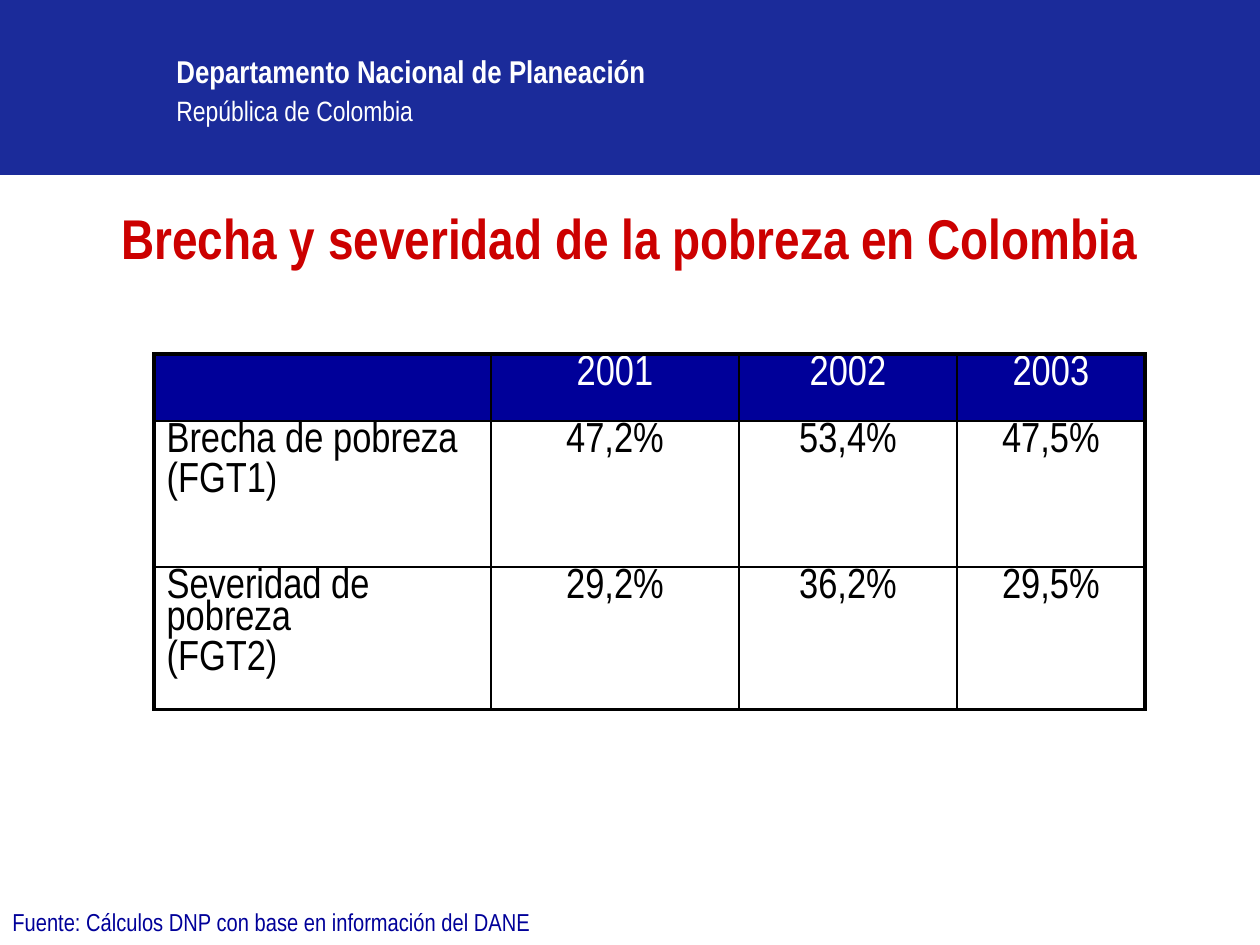
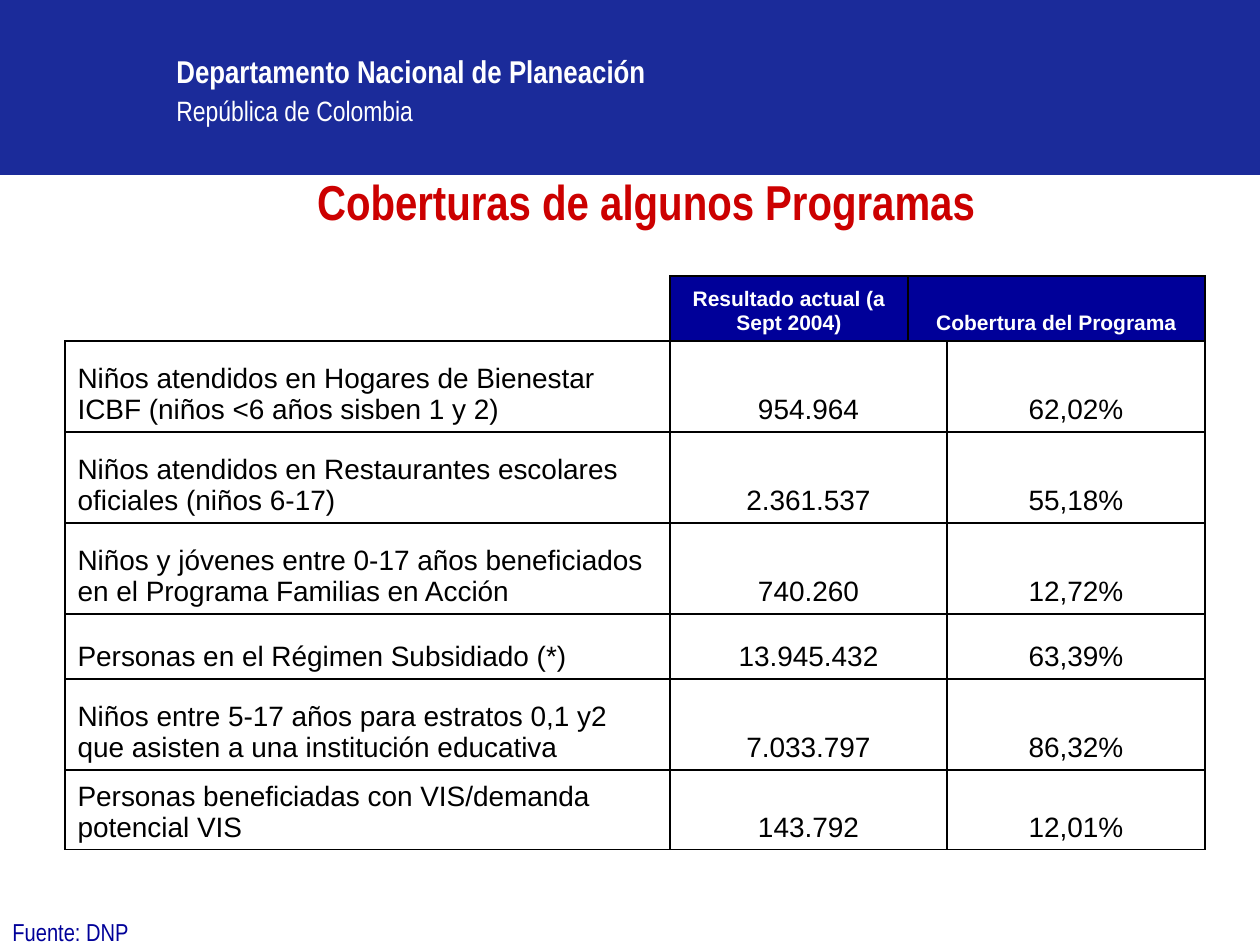
"""Build two slides on poverty and programme coverage in Colombia."""
from dataclasses import dataclass
from typing import NamedTuple, Optional

from lxml.etree import SubElement
from pptx import Presentation
from pptx.dml.color import RGBColor
from pptx.enum.shapes import MSO_SHAPE
from pptx.enum.text import MSO_ANCHOR, PP_ALIGN
from pptx.oxml.ns import qn
from pptx.util import Emu, Pt

EMU_PER_PX = 914400 / 126


@dataclass(frozen=True)
class Theme:
    """Colours, fonts and type sizes of the deck."""
    band: str = "1B2B9A"
    heading: str = "CC0000"
    navy: str = "000099"
    ink: str = "000000"
    paper: str = "FFFFFF"
    narrow: str = "Arial Narrow"
    regular: str = "Arial"
    agency_size: int = 18
    country_size: int = 16
    source_size: int = 14


THEME = Theme()


class Box(NamedTuple):
    """Position and size in px."""
    left: int
    top: int
    width: int
    height: int


class Style(NamedTuple):
    """Look of a run of text."""
    size: int
    color: str
    bold: bool = False
    font: str = THEME.narrow


@dataclass(frozen=True)
class Grid:
    """A table: its measures, its looks and its rows, None being merged leftwards."""
    left: int
    top: int
    widths: tuple[int, ...]
    heights: tuple[int, ...]
    rows: tuple[tuple[Optional[str], ...], ...]
    head: Style
    body: Style
    outer_line: float
    anchor: MSO_ANCHOR
    spacing: float = 1.0
    open_corner: bool = False


@dataclass(frozen=True)
class Page:
    """The content of one slide."""
    title: str
    title_box: Box
    title_size: int
    source: str
    source_top: int
    grid: Grid


PAGES = (
    Page(
        "Brecha y severidad de la pobreza en Colombia", Box(63, 197, 1134, 158), 32,
        "Fuente: Cálculos DNP con base en información del DANE", 900,
        Grid(
            154, 354, (337, 248, 218, 188), (67, 146, 139),
            (
                ("", "2001", "2002", "2003"),
                ("Brecha de pobreza\n(FGT1)", "47,2%", "53,4%", "47,5%"),
                ("Severidad de pobreza\n(FGT2)", "29,2%", "36,2%", "29,5%"),
            ),
            Style(24, THEME.paper), Style(24, THEME.ink),
            2.25, MSO_ANCHOR.TOP, spacing=0.8,
        ),
    ),
    Page(
        "Coberturas de algunos Programas", Box(79, 165, 1134, 59), 28,
        "Fuente: DNP", 910,
        Grid(
            65, 276, (605, 238, 39, 258), (65, 91, 91, 91, 65, 91, 75),
            (
                ("", "Resultado actual (a Sept 2004)", "Cobertura del Programa", None),
                ("Niños atendidos en Hogares de Bienestar ICBF (niños <6 años sisben 1 y 2)",
                 "954.964", None, "62,02%"),
                ("Niños atendidos en Restaurantes escolares oficiales (niños 6-17)",
                 "2.361.537", None, "55,18%"),
                ("Niños y jóvenes entre 0-17 años beneficiados en el Programa Familias en Acción",
                 "740.260", None, "12,72%"),
                ("Personas en el Régimen Subsidiado (*)", "13.945.432", None, "63,39%"),
                ("Niños entre 5-17 años para estratos 0,1 y2 que asisten a una institución educativa",
                 "7.033.797", None, "86,32%"),
                ("Personas beneficiadas con VIS/demanda potencial VIS",
                 "143.792", None, "12,01%"),
            ),
            Style(12, THEME.paper, True, THEME.regular),
            Style(16, THEME.ink, font=THEME.regular),
            1, MSO_ANCHOR.BOTTOM, open_corner=True,
        ),
    ),
)


def px(length: int) -> Emu:
    """Turn px into EMU."""
    return Emu(round(length * EMU_PER_PX))


def place(box: Box) -> tuple[Emu, ...]:
    """Turn a box into EMU lengths."""
    return tuple(px(length) for length in box)


def style_paragraph(paragraph, style: Style, align=PP_ALIGN.LEFT) -> None:
    """Align a paragraph and format its runs."""
    paragraph.alignment = align
    for run in paragraph.runs:
        run.font.name = style.font
        run.font.size = Pt(style.size)
        run.font.bold = style.bold
        run.font.color.rgb = RGBColor.from_string(style.color)


def add_text(slide, box: Box, text: str, styles: tuple[Style, ...], align=PP_ALIGN.LEFT):
    """Add a wrapped text box with one style per paragraph and return its frame."""
    frame = slide.shapes.add_textbox(*place(box)).text_frame
    frame.word_wrap = True
    frame.text = text
    for paragraph, style in zip(frame.paragraphs, styles):
        style_paragraph(paragraph, style, align)
    return frame


def add_band(slide) -> None:
    """Draw the agency band on top of the slide."""
    band = slide.shapes.add_shape(MSO_SHAPE.RECTANGLE, *place(Box(0, 0, 1260, 175)))
    band.shadow.inherit = False
    band.fill.solid()
    band.fill.fore_color.rgb = RGBColor.from_string(THEME.band)
    band.line.fill.background()
    agency = add_text(
        slide, Box(164, 35, 588, 97),
        "Departamento Nacional de Planeación\nRepública de Colombia",
        (Style(THEME.agency_size, THEME.paper, True), Style(THEME.country_size, THEME.paper)),
    )
    agency.margin_top = px(17)
    agency.paragraphs[1].space_before = Pt(2)


def set_borders(cell, widths: tuple[float, ...]) -> None:
    """Set left, right, top and bottom border widths, zero meaning none."""
    properties = cell._tc.get_or_add_tcPr()
    for position, (side, width) in enumerate(zip("LRTB", widths)):
        line = SubElement(properties, qn(f"a:ln{side}"), w=str(Pt(width)))
        if width:
            fill = SubElement(line, qn("a:solidFill"))
            SubElement(fill, qn("a:srgbClr"), val=THEME.ink)
        else:
            SubElement(line, qn("a:noFill"))
        properties.insert(position, line)


def fill_cell(cell, text: str, grid: Grid, row: int, column: int) -> None:
    """Write and format one cell according to its place in the grid."""
    is_corner = row == column == 0 and grid.open_corner
    if row == 0 and not is_corner:
        cell.fill.solid()
        cell.fill.fore_color.rgb = RGBColor.from_string(THEME.navy)
    else:
        cell.fill.background()
    edges = (column == 0, column == len(grid.widths) - 1,
             row == 0, row == len(grid.heights) - 1)
    set_borders(cell, (0, 1, 0, 1) if is_corner
                else tuple(grid.outer_line if edge else 1 for edge in edges))
    cell.vertical_anchor = grid.anchor
    cell.text_frame.text = text
    for index, paragraph in enumerate(cell.text_frame.paragraphs):
        style_paragraph(paragraph, grid.body if row else grid.head,
                        PP_ALIGN.CENTER if column else PP_ALIGN.LEFT)
        paragraph.line_spacing = grid.spacing
        if index:
            paragraph.space_before = Pt(5)


def add_grid(slide, grid: Grid) -> None:
    """Add the table of a slide."""
    box = Box(grid.left, grid.top, sum(grid.widths), sum(grid.heights))
    table = slide.shapes.add_table(len(grid.heights), len(grid.widths), *place(box)).table
    table.first_row = table.horz_banding = False
    for column, width in zip(table.columns, grid.widths):
        column.width = px(width)
    for row, height in zip(table.rows, grid.heights):
        row.height = px(height)
    for i, texts in enumerate(grid.rows):
        for j, text in enumerate(texts):
            fill_cell(table.cell(i, j), text or "", grid, i, j)
        if None in texts:
            merged = texts.index(None)
            table.cell(i, merged - 1).merge(table.cell(i, merged))


def add_page(deck, page: Page) -> None:
    """Add one slide with band, title, table and source."""
    slide = deck.slides.add_slide(deck.slide_layouts[6])
    add_band(slide)
    add_text(slide, page.title_box, page.title,
             (Style(page.title_size, THEME.heading, True),), PP_ALIGN.CENTER)
    add_grid(slide, page.grid)
    source = add_text(slide, Box(0, page.source_top, 1260, 10), page.source,
                      (Style(THEME.source_size, THEME.navy),))
    source.paragraphs[0].line_spacing = 1.1


def main() -> None:
    """Build and save the deck."""
    deck = Presentation()
    deck.slide_width, deck.slide_height = px(1260), px(945)
    for page in PAGES:
        add_page(deck, page)
    deck.save("out.pptx")


if __name__ == "__main__":
    main()
